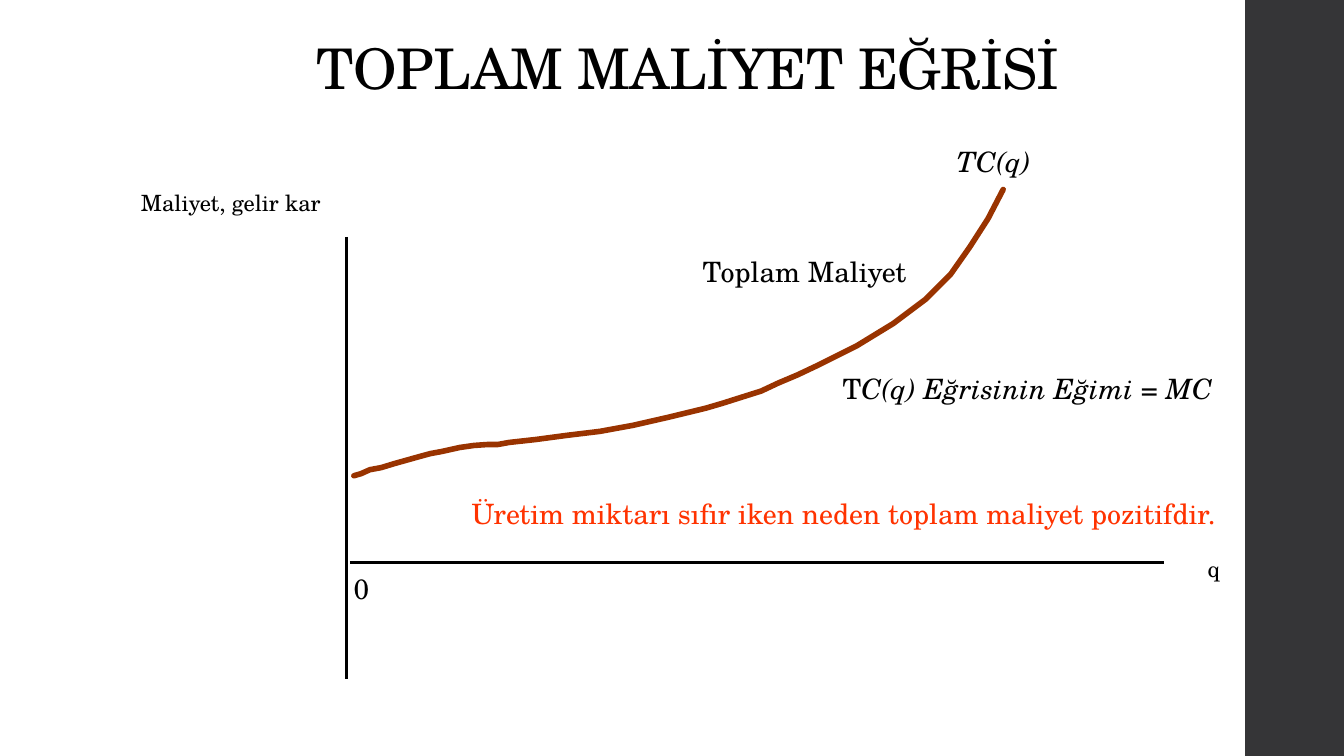
from dataclasses import dataclass

from lxml.etree import SubElement
from pptx import Presentation
from pptx.dml.color import RGBColor as Color
from pptx.enum.shapes import MSO_CONNECTOR as Connector, MSO_SHAPE as Preset
from pptx.enum.text import MSO_ANCHOR as Anchor, MSO_AUTO_SIZE as AutoSize, PP_ALIGN as Align
from pptx.oxml.ns import qn
from pptx.slide import Slide
from pptx.text.text import TextFrame
from pptx.util import Inches, Pt

# Grid: one column or row is one inch
COLUMNS, ROWS = 13.33, 7.5
CELL = Inches(1)
CURVE_STEPS = 100  # curve points are given in hundredths of a cell


@dataclass(frozen=True)
class Theme:
    font: str = "TeX Gyre Schola"
    ink: str = "000000"
    band: str = "353537"
    curve: str = "993300"
    question: str = "FF3300"
    title_size: int = 40
    label_size: int = 20
    axis_size: int = 16
    axis_width: int = 2
    curve_width: int = 4


THEME = Theme()


@dataclass(frozen=True)
class Box:
    column: float
    row: float
    columns: float
    rows: float

    def lengths(self) -> tuple[int, ...]:
        return tuple(round(n * CELL) for n in (self.column, self.row, self.columns, self.rows))


@dataclass(frozen=True)
class Run:
    text: str
    italic: bool = False


@dataclass(frozen=True)
class Label:
    box: Box
    runs: tuple[Run, ...]
    size: int = THEME.label_size
    color: str = THEME.ink
    align: Align = Align.LEFT


@dataclass(frozen=True)
class Axis:
    start: tuple[float, float]
    end: tuple[float, float]


TITLE_BOX = Box(0.8, 0.21, 12.05, 0.85)
BAND_BOX = Box(12.35, 0, COLUMNS - 12.35, ROWS)
AXES = (
    Axis((3.44, 2.35), (3.44, 6.74)),
    Axis((3.47, 5.58), (11.54, 5.58)),
)
LABELS = (
    Label(Box(3.41, 5.62, 0.36, 0.43), (Run("0"),)),
    Label(Box(1.26, 1.83, 2.02, 0.37), (Run("Maliyet, gelir kar"),),
          size=THEME.axis_size, align=Align.RIGHT),
    Label(Box(11.88, 5.46, 0.32, 0.37), (Run("q"),), size=THEME.axis_size),
    Label(Box(9.39, 1.38, 0.94, 0.43), (Run("TC(q)", italic=True),)),
    Label(Box(6.87, 2.48, 2.26, 0.44), (Run("Toplam Maliyet"),)),
    Label(Box(8.26, 3.64, 3.9, 0.44),
          (Run("T"), Run("C(q) Eğrisinin Eğimi ", italic=True),
           Run("= "), Run("MC", italic=True))),
    Label(Box(4.58, 4.88, 7.68, 0.44),
          (Run("Üretim miktarı sıfır iken neden toplam maliyet pozitifdir."),),
          color=THEME.question),
)
COST_CURVE = (
    (351, 472), (358, 470), (367, 466), (378, 464), (391, 460), (416, 453),
    (427, 450), (438, 448), (456, 444), (470, 442), (484, 441), (494, 441),
    (505, 439), (532, 436), (562, 432), (595, 428), (628, 422), (663, 414),
    (700, 405), (717, 400), (736, 394), (755, 388), (772, 380), (791, 372),
    (810, 363), (850, 343), (886, 321), (902, 309), (918, 297), (943, 272),
    (962, 245), (980, 217), (995, 188),
)


def write_text(frame: TextFrame, runs: tuple[Run, ...], *, size: int, color: str = THEME.ink,
               align: Align = Align.LEFT, line_spacing: float = 1.0, tracking: int = 0) -> None:
    paragraph = frame.paragraphs[0]
    paragraph.alignment = align
    paragraph.line_spacing = line_spacing
    for part in runs:
        run = paragraph.add_run()
        run.text = part.text
        run.font.name = THEME.font
        run.font.size = Pt(size)
        run.font.italic = part.italic
        run.font.color.rgb = Color.from_string(color)
        if tracking:
            run.font._element.set("spc", str(tracking))


def add_title(slide: Slide, text: str) -> None:
    title = slide.shapes.title
    title.left, title.top, title.width, title.height = TITLE_BOX.lengths()
    frame = title.text_frame
    frame.auto_size = AutoSize.NONE
    frame.vertical_anchor = Anchor.BOTTOM
    write_text(frame, (Run(text),), size=THEME.title_size, align=Align.CENTER,
               line_spacing=0.9, tracking=-50)


def add_band(slide: Slide) -> None:
    band = slide.shapes.add_shape(Preset.RECTANGLE, *BAND_BOX.lengths())
    band.shadow.inherit = False
    band.fill.solid()
    band.fill.fore_color.rgb = Color.from_string(THEME.band)
    band.line.fill.background()


def add_axis(slide: Slide, axis: Axis) -> None:
    ends = (round(n * CELL) for n in axis.start + axis.end)
    line = slide.shapes.add_connector(Connector.STRAIGHT, *ends)
    line.line.color.rgb = Color.from_string(THEME.ink)
    line.line.width = Pt(THEME.axis_width)
    SubElement(line._element.spPr, qn("a:effectLst"))


def add_curve(slide: Slide) -> None:
    start, *rest = COST_CURVE
    builder = slide.shapes.build_freeform(*start, scale=CELL / CURVE_STEPS)
    builder.add_line_segments(rest, close=False)
    curve = builder.convert_to_shape()
    curve.shadow.inherit = False
    curve.fill.background()
    curve.line.color.rgb = Color.from_string(THEME.curve)
    curve.line.width = Pt(THEME.curve_width)
    outline = curve.line._get_or_add_ln()
    outline.set("cap", "rnd")
    SubElement(outline, qn("a:round"))


def add_label(slide: Slide, label: Label) -> None:
    frame = slide.shapes.add_textbox(*label.box.lengths()).text_frame
    frame.word_wrap = False
    frame.auto_size = AutoSize.SHAPE_TO_FIT_TEXT
    write_text(frame, label.runs, size=label.size, color=label.color, align=label.align)


def main() -> None:
    presentation = Presentation()
    presentation.slide_width = round(COLUMNS * CELL)
    presentation.slide_height = round(ROWS * CELL)
    slide = presentation.slides.add_slide(presentation.slide_layouts[5])

    # Frame of the slide
    add_band(slide)
    add_title(slide, "TOPLAM MALİYET EĞRİSİ")

    # Cost diagram
    for axis in AXES:
        add_axis(slide, axis)
    add_curve(slide)
    for label in LABELS:
        add_label(slide, label)

    presentation.save("out.pptx")


if __name__ == "__main__":
    main()
